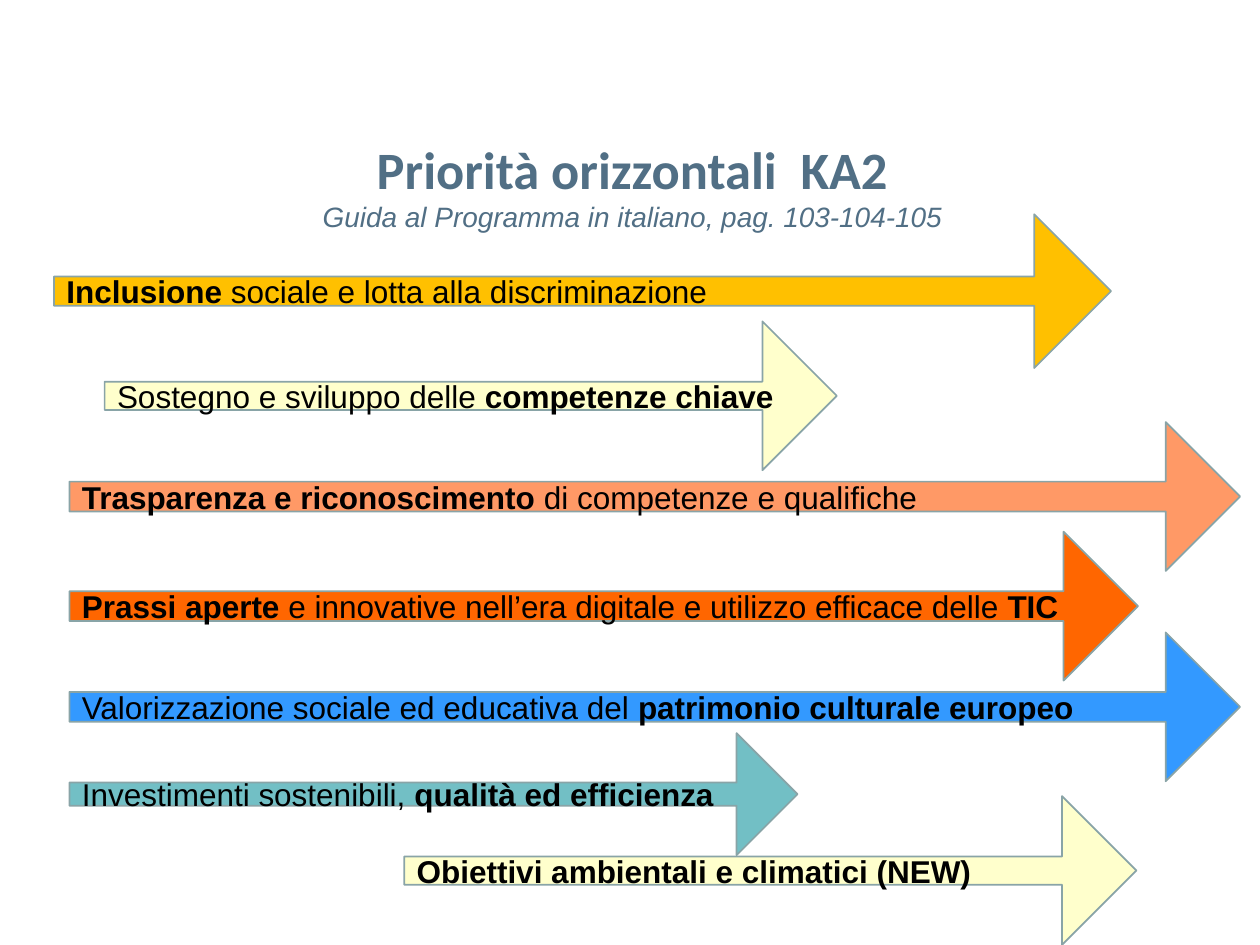
import pptx
import pptx.util
import pptx.dml.color
import pptx.enum.shapes
import pptx.enum.text

Cm = pptx.util.Cm
Pt = pptx.util.Pt
Rgb = pptx.dml.color.RGBColor.from_string
Align = pptx.enum.text.PP_ALIGN
Anchor = pptx.enum.text.MSO_ANCHOR

theme = {
    "title": "516F85", "text": "000000", "edge": "89A4A7",
    "gold": "FFC000", "cream": "FFFFCC", "peach": "FF9966",
    "blue": "3399FF", "orange": "FF6600", "teal": "72BFC5",
    "big": 30, "small": 16, "label": 18,
    "head": "Calibri", "body": "Arial",
}


def style(run, font, size, color, bold=False, italic=False):
    run.font.name = font
    run.font.size = Pt(size)
    run.font.color.rgb = Rgb(color)
    run.font.bold = bold
    run.font.italic = italic


deck = pptx.Presentation()
deck.slide_width, deck.slide_height = Cm(25.4), Cm(19.05)
slide = deck.slides.add_slide(deck.slide_layouts[5])

# Title with its source line
title = slide.shapes.title
title.left, title.top, title.width, title.height = Cm(0.05), Cm(2.03), Cm(25.4), Cm(3.4)
frame = title.text_frame
frame.text = "Priorità orizzontali  KA2\vGuida al Programma in italiano, pag. 103-104-105"
frame.vertical_anchor = Anchor.MIDDLE
line = frame.paragraphs[0]
line.alignment = Align.CENTER
style(line.runs[0], theme["head"], theme["big"], theme["title"], bold=True)
style(line.runs[1], theme["body"], theme["small"], theme["title"], italic=True)

# Arrows: left, top, width, height, shaft share, fill, label (*bold*)
arrows = [
    (1.09, 4.32, 21.31, 3.1, 0.19, "gold",
     "*Inclusione *sociale e lotta alla discriminazione"),
    (2.11, 6.48, 14.76, 3, 0.19, "cream",
     "Sostegno e sviluppo delle *competenze chiave*"),
    (1.4, 8.51, 23.6, 3, 0.2, "peach",
     "*Trasparenza e riconoscimento *di competenze e qualifiche"),
    (1.4, 12.75, 23.6, 3, 0.2, "blue",
     "Valorizzazione sociale ed educativa del *patrimonio culturale europeo*"),
    (1.4, 10.72, 21.54, 3, 0.2, "orange",
     "*Prassi aperte *e innovative nell’era digitale e utilizzo efficace delle *TIC*"),
    (1.4, 14.78, 14.68, 2.46, 0.19, "teal",
     "Investimenti sostenibili, *qualità ed efficienza*"),
    (8.15, 16.05, 14.76, 3, 0.19, "cream",
     "*Obiettivi ambientali e climatici (NEW)*"),
]
for left, top, width, height, shaft, fill, label in arrows:
    arrow = slide.shapes.add_shape(
        pptx.enum.shapes.MSO_SHAPE.RIGHT_ARROW,
        Cm(left), Cm(top), Cm(width), Cm(height))
    arrow.adjustments[0] = shaft
    arrow.adjustments[1] = 0.5
    arrow.shadow.inherit = False
    arrow.fill.solid()
    arrow.fill.fore_color.rgb = Rgb(theme[fill])
    arrow.line.color.rgb = Rgb(theme["edge"])
    arrow.line.width = Pt(1)

    # Label: every second piece between asterisks is bold
    frame = arrow.text_frame
    frame.word_wrap = True
    frame.vertical_anchor = Anchor.MIDDLE
    frame.margin_right = 0
    line = frame.paragraphs[0]
    line.alignment = Align.LEFT
    for spot, piece in enumerate(label.split("*")):
        if piece:
            run = line.add_run()
            run.text = piece
            style(run, theme["body"], theme["label"], theme["text"], bold=spot % 2 == 1)

deck.save("out.pptx")
